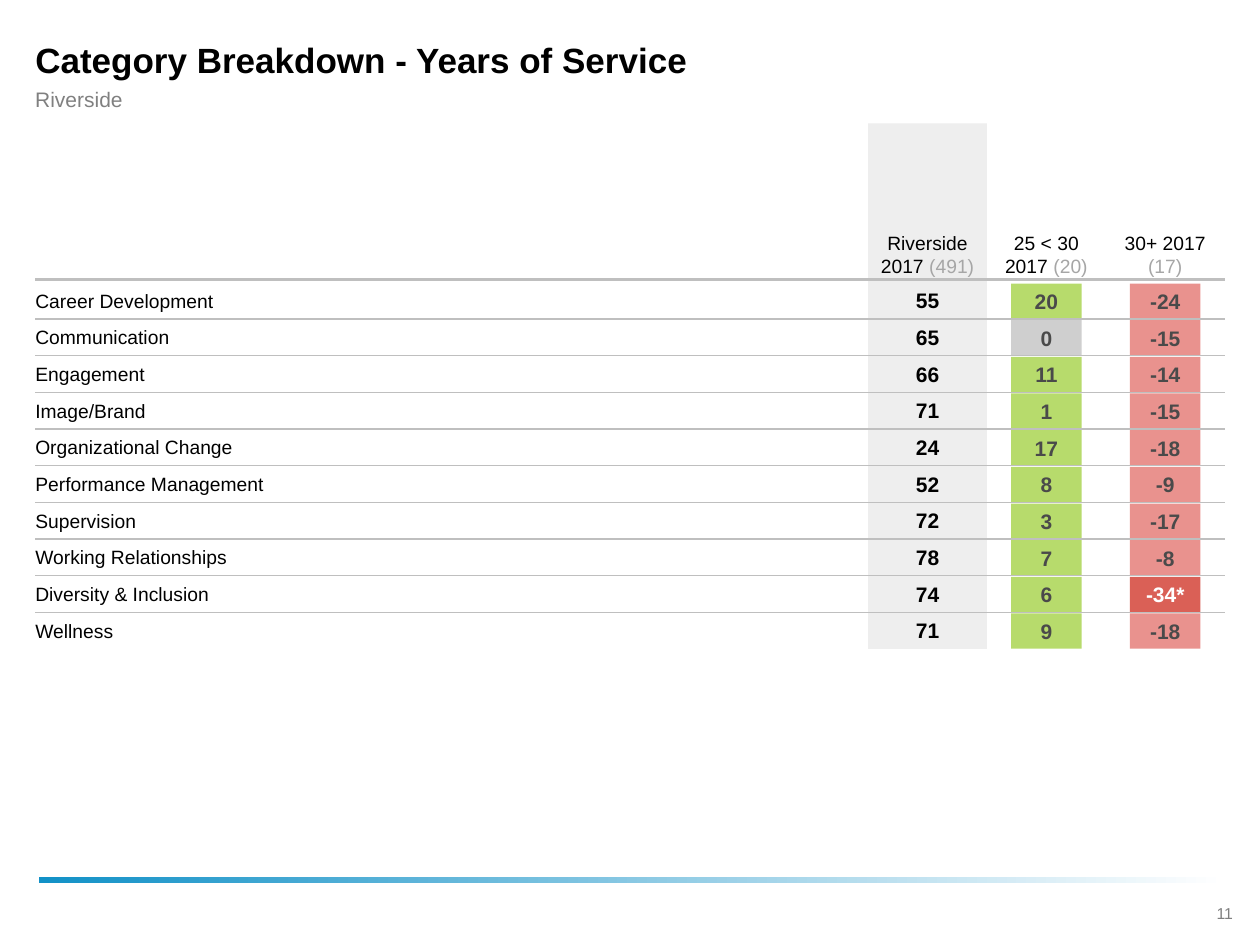
from dataclasses import dataclass

import pptx
import pptx.dml.color
import pptx.enum.shapes
import pptx.enum.text
import pptx.oxml.ns
import pptx.util
from lxml import etree

Inches = pptx.util.Inches
RGBColor = pptx.dml.color.RGBColor
Align = pptx.enum.text.PP_ALIGN
Anchor = pptx.enum.text.MSO_ANCHOR

BLACK = RGBColor(0x00, 0x00, 0x00)
WHITE = RGBColor(0xFF, 0xFF, 0xFF)
BLUE = RGBColor(0x12, 0x91, 0xC7)
PANEL = RGBColor(0xEE, 0xEE, 0xEE)
RULE = RGBColor(0xBF, 0xBF, 0xBF)
COUNT_GRAY = RGBColor(0xA6, 0xA6, 0xA6)
SUBTITLE_GRAY = RGBColor(0x80, 0x80, 0x80)
NUMBER_GRAY = RGBColor(0x7F, 0x7F, 0x7F)
SCORE_GRAY = RGBColor(0x4A, 0x4A, 0x4A)
HIGHER = RGBColor(0xB7, 0xDB, 0x6C)
EQUAL = RGBColor(0xCF, 0xCF, 0xCF)
LOWER = RGBColor(0xE9, 0x92, 0x8E)
MUCH_LOWER = RGBColor(0xDA, 0x60, 0x56)

LEFT, RIGHT = 0.28, 9.72
COLUMNS_LEFT = 6.89
COLUMN_WIDTH = (RIGHT - COLUMNS_LEFT) / 3
HEADER_TOP, HEADER_HEIGHT = 0.98, 1.25
ROWS_TOP, ROWS_BOTTOM = 2.24, 5.15
CHIP_WIDTH, CHIP_HEIGHT = 0.56, 0.28


@dataclass(frozen=True)
class Group:
    name: str
    count: str


@dataclass(frozen=True)
class Category:
    name: str
    score: str
    differences: tuple[str, str]


@dataclass(frozen=True)
class Box:
    left: float
    top: float
    width: float
    height: float

    def lengths(self):
        return [Inches(v) for v in (self.left, self.top, self.width, self.height)]


GROUPS = [
    Group("Riverside 2017", "(491)"),
    Group("25 < 30 2017", "(20)"),
    Group("30+ 2017", "(17)"),
]
CATEGORIES = [
    Category("Career Development", "55", ("20", "-24")),
    Category("Communication", "65", ("0", "-15")),
    Category("Engagement", "66", ("11", "-14")),
    Category("Image/Brand", "71", ("1", "-15")),
    Category("Organizational Change", "24", ("17", "-18")),
    Category("Performance Management", "52", ("8", "-9")),
    Category("Supervision", "72", ("3", "-17")),
    Category("Working Relationships", "78", ("7", "-8")),
    Category("Diversity & Inclusion", "74", ("6", "-34*")),
    Category("Wellness", "71", ("9", "-18")),
]
ROW_HEIGHT = (ROWS_BOTTOM - ROWS_TOP) / len(CATEGORIES)


def column_left(index: int) -> float:
    return COLUMNS_LEFT + index * COLUMN_WIDTH


def write(shape, parts: list[tuple[str, RGBColor]], size: float, bold=False,
          align=Align.LEFT, anchor=Anchor.MIDDLE, insets=(0, 0, 0, 0), wrap=True):
    """Fill a shape with one paragraph made of (text, colour) parts."""
    frame = shape.text_frame
    frame.auto_size = pptx.enum.text.MSO_AUTO_SIZE.NONE
    frame.word_wrap = wrap
    frame.vertical_anchor = anchor
    (frame.margin_left, frame.margin_top,
     frame.margin_right, frame.margin_bottom) = map(Inches, insets)
    paragraph = frame.paragraphs[0]
    paragraph.alignment = align
    paragraph.font.name = "Arial"
    paragraph.font.size = pptx.util.Pt(size)
    paragraph.font.bold = bold
    for text, color in parts:
        run = paragraph.add_run()
        run.text = text
        run.font.color.rgb = color


def add_text(slide, box: Box, parts: list[tuple[str, RGBColor]], size: float, **style):
    write(slide.shapes.add_textbox(*box.lengths()), parts, size, **style)


def add_rectangle(slide, box: Box, color: RGBColor | None = None):
    rectangle = slide.shapes.add_shape(
        pptx.enum.shapes.MSO_SHAPE.RECTANGLE, *box.lengths())
    rectangle.shadow.inherit = False
    rectangle.line.fill.background()
    if color is not None:
        rectangle.fill.solid()
        rectangle.fill.fore_color.rgb = color
    return rectangle


def add_rule(slide, y: float, weight: float):
    rule = slide.shapes.add_connector(
        pptx.enum.shapes.MSO_CONNECTOR.STRAIGHT,
        Inches(LEFT), Inches(y), Inches(RIGHT), Inches(y))
    rule.line.color.rgb = RULE
    rule.line.width = pptx.util.Pt(weight)
    etree.SubElement(rule._element.spPr, pptx.oxml.ns.qn("a:effectLst"))


def difference_colors(difference: str) -> tuple[RGBColor, RGBColor]:
    """Return fill and text colours; an asterisk marks a significant gap."""
    if difference.endswith("*"):
        return MUCH_LOWER, WHITE
    value = int(difference)
    fill = HIGHER if value > 0 else LOWER if value < 0 else EQUAL
    return fill, SCORE_GRAY


def add_footer(slide):
    band = add_rectangle(slide, Box(0.31, 6.96, 9.42, 0.05))
    band.fill.gradient()
    band.fill.gradient_angle = 0
    for stop, position, color in zip(band.fill.gradient_stops, (0, 1), (BLUE, WHITE)):
        stop.position = position
        stop.color.rgb = color
    add_text(slide, Box(9.46, 7.12, 0.52, 0.25), [("11", NUMBER_GRAY)], 9,
             align=Align.CENTER, anchor=Anchor.TOP, insets=(0.1, 0.05, 0.1, 0.05))


def add_titles(slide):
    title = slide.shapes.title
    title.left, title.top, title.width, title.height = Box(
        LEFT, 0.28, RIGHT - LEFT, 0.38).lengths()
    write(title, [("Category Breakdown - Years of Service", BLACK)], 20,
          bold=True, insets=(0, 0, 0.35, 0))
    add_text(slide, Box(LEFT, 0.68, RIGHT - LEFT, 0.21),
             [("Riverside", SUBTITLE_GRAY)], 12, insets=(0, 0, 0.35, 0))


def add_header(slide):
    add_rectangle(slide, Box(COLUMNS_LEFT, HEADER_TOP, COLUMN_WIDTH,
                             ROWS_BOTTOM - HEADER_TOP), PANEL)
    add_rule(slide, 2.22, 1.5)
    for index, group in enumerate(GROUPS):
        add_text(slide, Box(column_left(index), HEADER_TOP, COLUMN_WIDTH, HEADER_HEIGHT),
                 [(group.name + " ", BLACK), (group.count, COUNT_GRAY)], 11,
                 align=Align.CENTER, anchor=Anchor.BOTTOM, insets=(0.03,) * 4)


def add_category(slide, category: Category, top: float):
    add_text(slide, Box(LEFT, top + 0.03, COLUMNS_LEFT - LEFT, 0.23),
             [(category.name, BLACK)], 11)
    add_text(slide, Box(COLUMNS_LEFT, top, COLUMN_WIDTH, ROW_HEIGHT),
             [(category.score, BLACK)], 12, bold=True,
             align=Align.CENTER, insets=(0.03,) * 4)
    for index, difference in enumerate(category.differences, start=1):
        fill, color = difference_colors(difference)
        left = column_left(index) + (COLUMN_WIDTH - CHIP_WIDTH) / 2
        chip = add_rectangle(slide, Box(left, top + 0.01, CHIP_WIDTH, CHIP_HEIGHT), fill)
        write(chip, [(difference, color)], 12, bold=True, align=Align.CENTER,
              insets=(0, 0.05, 0, 0.05), wrap=False)


def main():
    deck = pptx.Presentation()
    deck.slide_width, deck.slide_height = Inches(10), Inches(7.5)
    slide = deck.slides.add_slide(deck.slide_layouts.get_by_name("Title Only"))
    add_footer(slide)
    add_titles(slide)
    add_header(slide)
    for index, category in enumerate(CATEGORIES):
        top = ROWS_TOP + index * ROW_HEIGHT
        if index > 0:
            add_rule(slide, top, 0.75)
        add_category(slide, category, top)
    deck.save("out.pptx")


if __name__ == "__main__":
    main()
